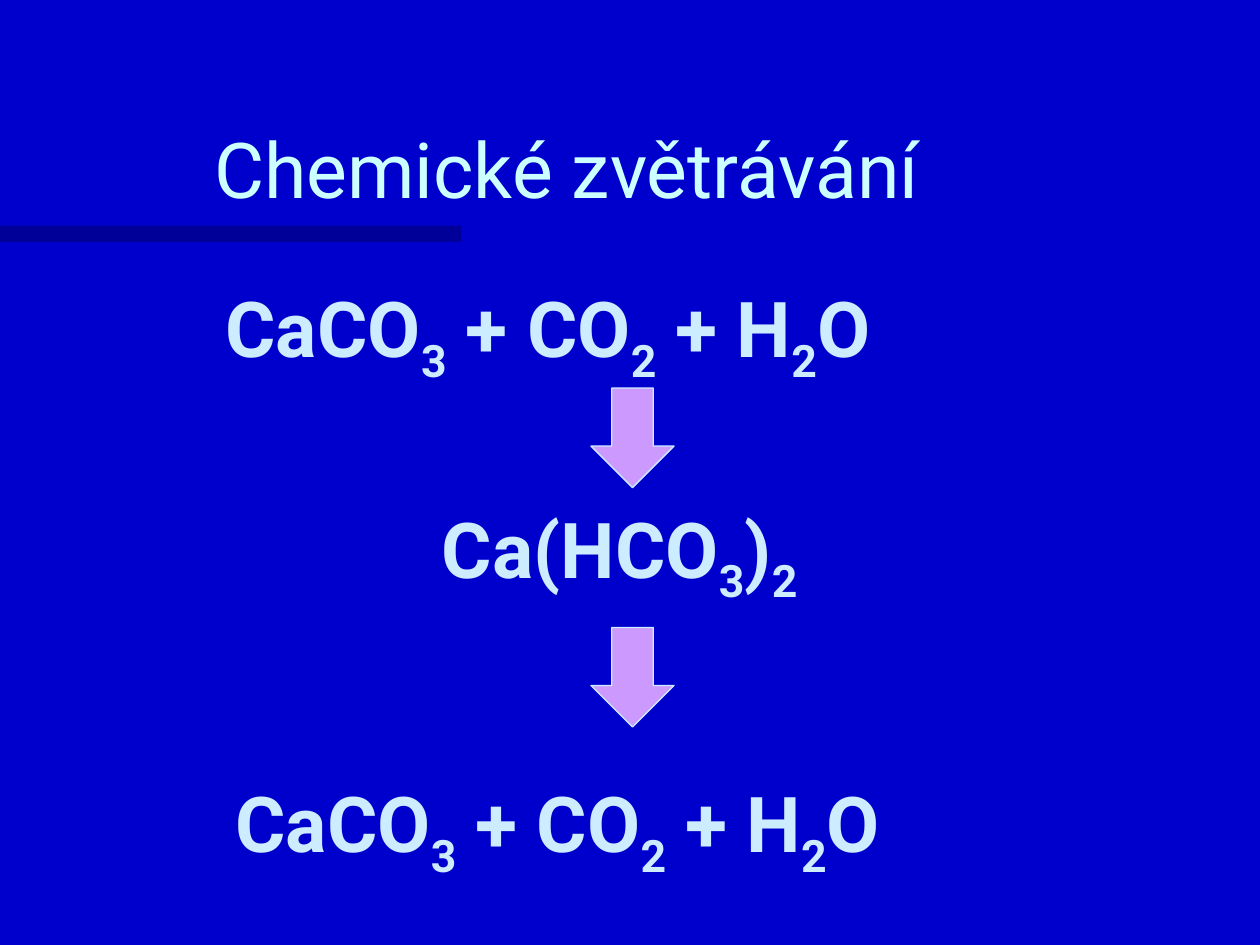
from dataclasses import dataclass
from itertools import groupby

from lxml.etree import SubElement
from pptx import Presentation
from pptx.dml.color import RGBColor
from pptx.enum.shapes import MSO_SHAPE
from pptx.enum.text import MSO_ANCHOR, MSO_AUTO_SIZE, PP_ALIGN
from pptx.oxml.ns import qn
from pptx.util import Emu, Pt

PX = 9144  # EMU per px, 100 px to the inch
COLORS = {
    "background": "0000CC",
    "bar": "000066",
    "title": "CCFFFF",
    "formula": "CCECFF",
    "arrow": "CC99FF",
}
TITLE_FONT = {"name": "Roboto", "size": Pt(44), "bold": False}
FORMULA_FONT = {"name": "Roboto", "size": Pt(44), "bold": True}
FRAME_FORMAT = {
    "word_wrap": True,
    "auto_size": MSO_AUTO_SIZE.NONE,
    "vertical_anchor": MSO_ANCHOR.TOP,
}


@dataclass(frozen=True)
class Box:
    left: int
    top: int
    width: int
    height: int

    def emu(self) -> list[Emu]:
        return [Emu(n * PX) for n in (self.left, self.top, self.width, self.height)]


@dataclass(frozen=True)
class Formula:
    text: str
    box: Box


REACTANTS = "CaCO3 + CO2 + H2O"
BODY = Formula(REACTANTS, Box(169, 218, 622, 87))
LOWER_FORMULAS = [
    Formula("Ca(HCO3)2", Box(341, 393, 387, 87)),
    Formula(REACTANTS, Box(177, 611, 669, 87)),
]
ARROWS = [Box(469, top, 66, 79) for top in (308, 498)]


def color(name: str) -> RGBColor:
    return RGBColor.from_string(COLORS[name])


def set_format(target, values: dict) -> None:
    for name, value in values.items():
        setattr(target, name, value)


def place(shape, box: Box) -> None:
    set_format(shape, dict(zip(("left", "top", "width", "height"), box.emu())))


def write_formula(shape, text: str) -> None:
    """Write a chemical formula with every number as a subscript."""
    set_format(shape.text_frame, FRAME_FORMAT)
    paragraph = shape.text_frame.paragraphs[0]
    properties = paragraph._p.get_or_add_pPr()
    properties.set("marL", "0")
    properties.set("indent", "0")
    SubElement(properties, qn("a:buNone"))
    set_format(paragraph, {"alignment": PP_ALIGN.LEFT, "space_before": Pt(0)})
    for is_number, characters in groupby(text, str.isdigit):
        run = paragraph.add_run()
        run.text = "".join(characters)
        set_format(run.font, FORMULA_FONT)
        run.font.color.rgb = color("formula")
        if is_number:
            run._r.get_or_add_rPr().set("baseline", "-25000")


def add_filled(slide, kind: MSO_SHAPE, box: Box, fill: str):
    shape = slide.shapes.add_shape(kind, *box.emu())
    shape.shadow.inherit = False
    shape.fill.solid()
    shape.fill.fore_color.rgb = color(fill)
    return shape


def main() -> None:
    presentation = Presentation()
    presentation.slide_width, presentation.slide_height = Emu(1000 * PX), Emu(750 * PX)
    slide = presentation.slides.add_slide(presentation.slide_layouts[1])
    slide.background.fill.solid()
    slide.background.fill.fore_color.rgb = color("background")

    # Half-transparent bar under the title, sent to the back
    bar = add_filled(slide, MSO_SHAPE.RECTANGLE, Box(0, 179, 366, 13), "bar")
    bar.line.fill.background()
    SubElement(bar._element.find(".//" + qn("a:srgbClr")), qn("a:alpha"), val="50000")
    slide.shapes._spTree.insert(2, bar._element)

    # Title
    title = slide.shapes.title
    place(title, Box(25, 50, 850, 125))
    title.text_frame.text = "Chemické zvětrávání"
    set_format(title.text_frame, {**FRAME_FORMAT, "vertical_anchor": MSO_ANCHOR.BOTTOM})
    paragraph = title.text_frame.paragraphs[0]
    paragraph.alignment = PP_ALIGN.CENTER
    set_format(paragraph.runs[0].font, TITLE_FONT)
    paragraph.runs[0].font.color.rgb = color("title")

    # Formulas
    body = slide.placeholders[1]
    place(body, BODY.box)
    write_formula(body, BODY.text)
    for formula in LOWER_FORMULAS:
        write_formula(slide.shapes.add_textbox(*formula.box.emu()), formula.text)

    # Arrows between the formulas
    for box in ARROWS:
        arrow = add_filled(slide, MSO_SHAPE.DOWN_ARROW, box, "arrow")
        arrow.line.color.rgb = color("formula")
        arrow.line.width = Pt(0.75)

    presentation.save("out.pptx")


if __name__ == "__main__":
    main()
